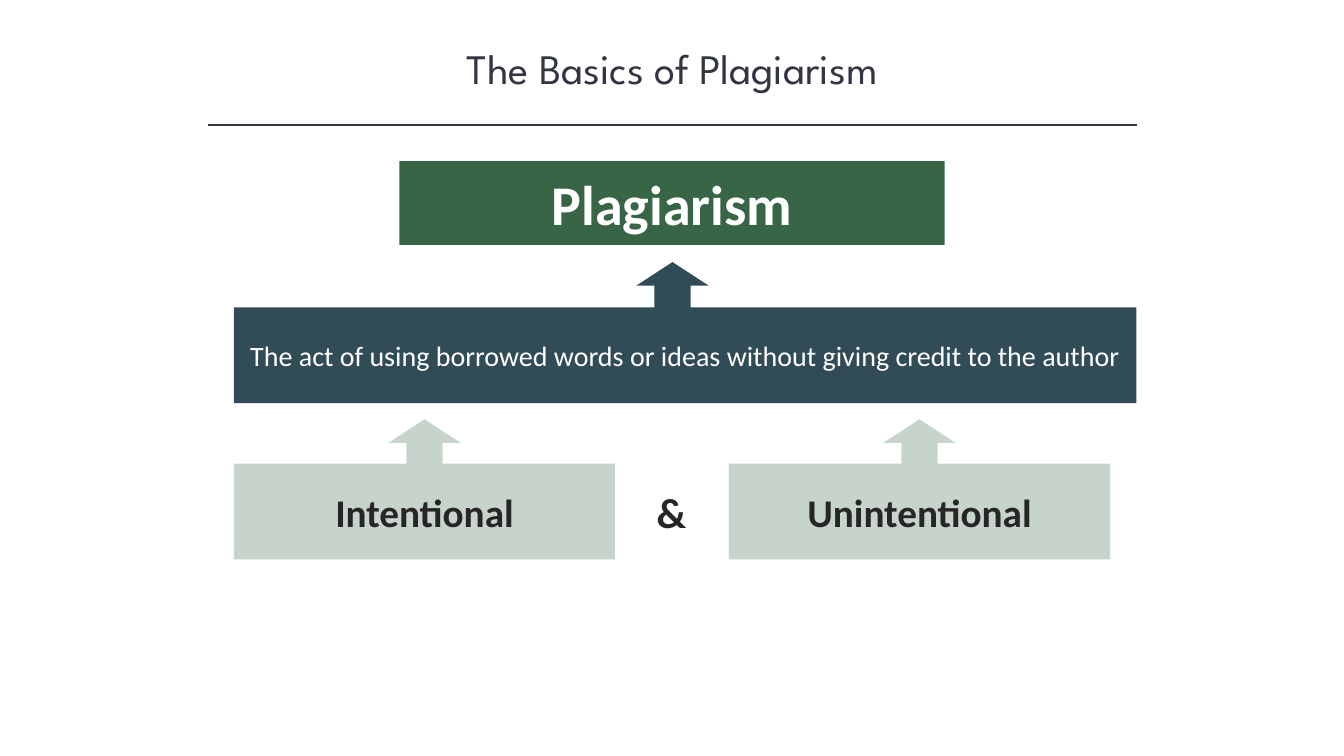
from pptx import Presentation
from pptx.dml.color import RGBColor
from pptx.enum.shapes import MSO_CONNECTOR, MSO_SHAPE
from pptx.enum.text import MSO_ANCHOR, PP_ALIGN
from pptx.oxml.ns import qn
from pptx.util import Inches, Pt
from lxml import etree

INK, GREEN, SLATE, SAGE, CHARCOAL, WHITE = "323542", "386546", "314C57", "C7D4CB", "262626", "FFFFFF"


def set_text(shape, text, size, color, bold=False, font="Calibri"):
    frame = shape.text_frame
    frame.word_wrap = True
    frame.vertical_anchor = MSO_ANCHOR.MIDDLE
    frame.text = text
    paragraph = frame.paragraphs[0]
    paragraph.alignment = PP_ALIGN.CENTER
    paragraph.font.name = font
    paragraph.font.size = Pt(size)
    paragraph.font.bold = bold
    paragraph.font.color.rgb = RGBColor.from_string(color)


def add_filled(preset, left, top, width, height, color):
    shape = slide.shapes.add_shape(preset, Inches(left), Inches(top), Inches(width), Inches(height))
    shape.shadow.inherit = False
    shape.fill.solid()
    shape.fill.fore_color.rgb = RGBColor.from_string(color)
    shape.line.fill.background()
    return shape


presentation = Presentation()
presentation.slide_width = Inches(13.33)
presentation.slide_height = Inches(7.5)
slide = presentation.slides.add_slide(presentation.slide_layouts[5])

title = slide.shapes.title
title.left, title.top, title.width, title.height = Inches(1.67), Inches(0.37), Inches(10), Inches(0.61)
set_text(title, "The Basics of Plagiarism", 30, INK, font="League Spartan")

rule = slide.shapes.add_connector(
    MSO_CONNECTOR.STRAIGHT, Inches(2.06), Inches(1.24), Inches(11.28), Inches(1.24))
rule.line.color.rgb = RGBColor.from_string(INK)
rule.line.width = Pt(1)
etree.SubElement(rule.element.spPr, qn("a:effectLst"))

definition = "The act of using borrowed words or ideas without giving credit to the author"
boxes = [
    ("Plagiarism", 3.96, 1.6, 5.41, 0.83, GREEN, 40, WHITE, True),
    (definition, 2.32, 3.05, 8.95, 0.95, SLATE, 20, WHITE, False),
    ("Intentional", 2.32, 4.6, 3.78, 0.95, SAGE, 28, CHARCOAL, True),
    ("Unintentional", 7.23, 4.6, 3.78, 0.95, SAGE, 28, CHARCOAL, True),
]
for text, left, top, width, height, fill, size, color, bold in boxes:
    box = add_filled(MSO_SHAPE.RECTANGLE, left, top, width, height, fill)
    set_text(box, text, size, color, bold)

arrow_width, arrow_height = 0.72, 0.47
for center, top, color in [(6.67, 2.6, SLATE), (4.21, 4.16, SAGE), (9.12, 4.16, SAGE)]:
    add_filled(MSO_SHAPE.UP_ARROW, center - arrow_width / 2, top, arrow_width, arrow_height, color)

ampersand = slide.shapes.add_textbox(Inches(6.14), Inches(4.77), Inches(1.04), Inches(0.61))
set_text(ampersand, "&", 30, CHARCOAL, bold=True)

presentation.save("out.pptx")
